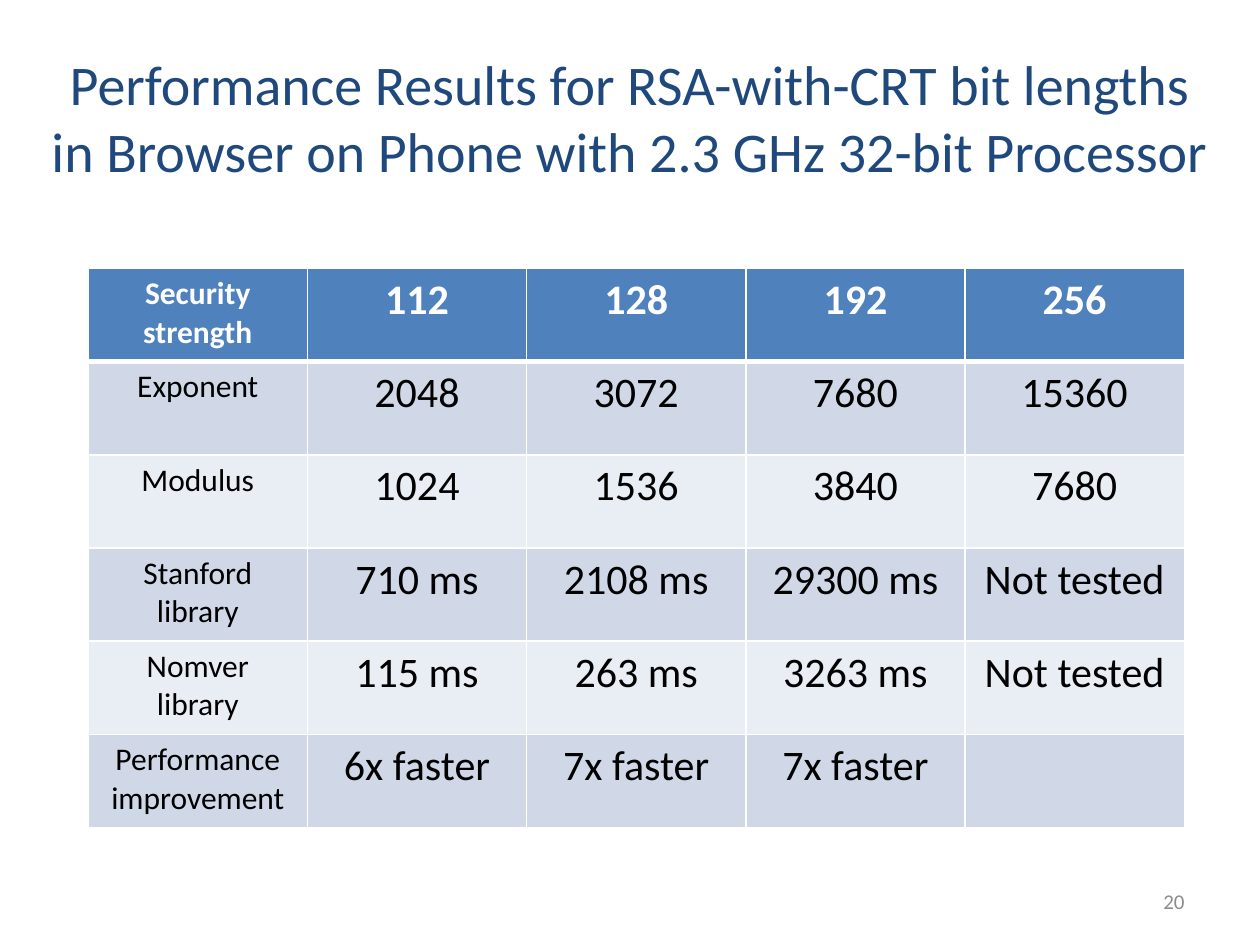
from dataclasses import dataclass

from lxml.etree import SubElement as Sub
from pptx import Presentation
from pptx.dml.color import RGBColor as Rgb
from pptx.enum.text import MSO_ANCHOR as Anchor, PP_ALIGN as Align
from pptx.oxml.ns import qn
from pptx.util import Inches, Pt


@dataclass(frozen=True)
class Theme:
    face: str = "Calibri"
    title: str = "1F497D"
    muted: str = "8C8C8C"
    head: str = "4F81BD"
    bands: tuple = ("D0D8E8", "E9EDF4")
    light: str = "FFFFFF"
    dark: str = "000000"
    large: int = 32
    value: int = 24
    label: int = 18
    small: int = 12
    thin: int = 1
    thick: int = 3


class Deck:
    """Draw styled elements on the current slide."""

    def __init__(self, theme):
        self.theme = theme
        self.show = Presentation()
        self.show.slide_width, self.show.slide_height = Inches(10), Inches(7.5)
        self.slide = self.show.slides.add_slide(self.show.slide_layouts[6])

    def label(self, frame, text, size, color, align, bold=False):
        frame.text = text
        for para in frame.paragraphs:
            para.alignment = align
            font = para.font
            font.name, font.size, font.bold = self.theme.face, Pt(size), bold
            font.color.rgb = Rgb.from_string(color)

    def text(self, box, text, size, color, align):
        frame = self.slide.shapes.add_textbox(*map(Inches, box)).text_frame
        frame.word_wrap = True
        frame.vertical_anchor = Anchor.MIDDLE
        self.label(frame, text, size, color, align)

    def edge(self, cell, side, width):
        props = cell._tc.get_or_add_tcPr()
        line = Sub(props, qn(f"a:ln{side}"), w=str(Pt(width)))
        fill = Sub(line, qn("a:solidFill"))
        Sub(fill, qn("a:srgbClr"), val=self.theme.light)

    def cell(self, cell, text, row, col):
        theme = self.theme
        head = row == 0
        for side in "LRTB":
            heavy = (side, row) in (("B", 0), ("T", 1))
            self.edge(cell, side, theme.thick if heavy else theme.thin)
        cell.fill.solid()
        shade = theme.head if head else theme.bands[(row - 1) % 2]
        cell.fill.fore_color.rgb = Rgb.from_string(shade)
        size = theme.value if col else theme.label
        color = theme.light if head else theme.dark
        self.label(cell.text_frame, text, size, color, Align.CENTER, head)

    def table(self, left, top, wide, high, rows):
        count, span = len(rows), len(rows[0])
        box = map(Inches, (left, top, wide * span, high * count))
        table = self.slide.shapes.add_table(count, span, *box).table
        for row, texts in enumerate(rows):
            for col, text in enumerate(texts):
                self.cell(table.cell(row, col), text, row, col)


ROWS = (
    ("Security strength", "112", "128", "192", "256"),
    ("Exponent", "2048", "3072", "7680", "15360"),
    ("Modulus", "1024", "1536", "3840", "7680"),
    ("Stanford\nlibrary", "710 ms", "2108 ms", "29300 ms", "Not tested"),
    ("Nomver\nlibrary", "115 ms", "263 ms", "3263 ms", "Not tested"),
    ("Performance\nimprovement", "6x faster", "7x faster", "7x faster", ""),
)
TITLE = ("Performance Results for RSA-with-CRT bit lengths\v"
         "in Browser on Phone with 2.3 GHz 32-bit Processor")


def main():
    theme = Theme()
    deck = Deck(theme)
    deck.text((0, 0.3, 10, 1.25), TITLE, theme.large, theme.title, Align.CENTER)
    deck.text((7.17, 6.95, 2.33, 0.4), "20", theme.small, theme.muted, Align.RIGHT)
    deck.table(0.7, 2.13, 1.74, 0.74, ROWS)
    deck.show.save("out.pptx")


if __name__ == "__main__":
    main()
